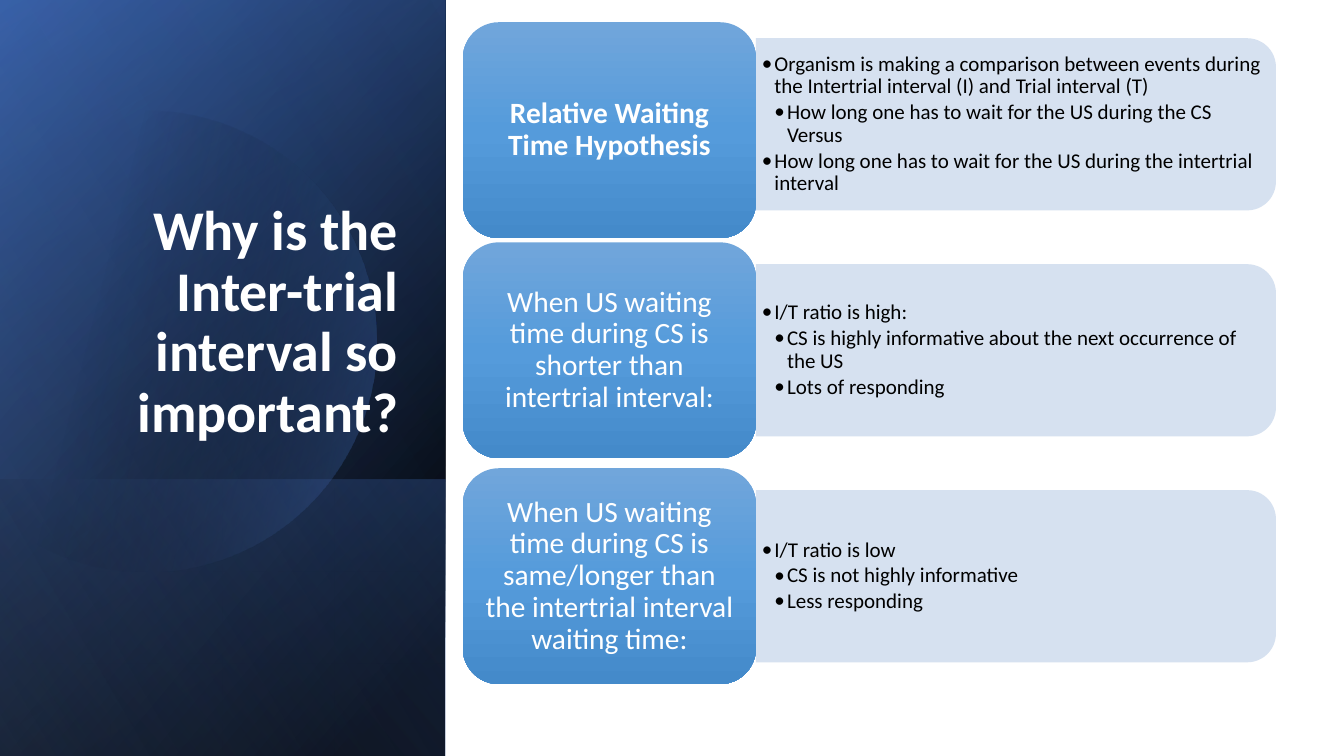
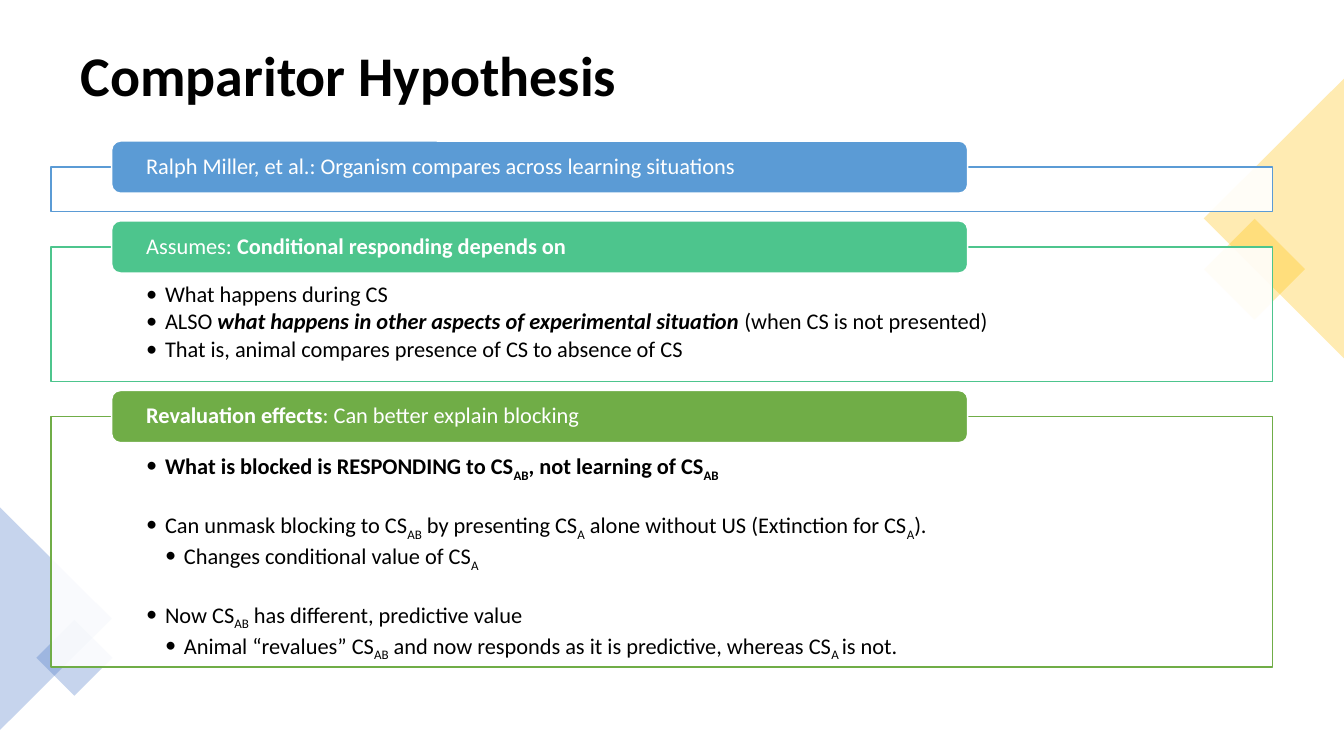
from math import cos, radians, sin

from pptx import Presentation
from pptx.dml.color import RGBColor
from pptx.enum.shapes import MSO_SHAPE as Preset
from pptx.enum.text import MSO_ANCHOR as Anchor, PP_ALIGN as Align
from pptx.oxml.ns import qn
from pptx.util import Inches, Pt
from lxml.etree import SubElement

# Shared look: a square grid of 160 columns by 90 rows
COLS, ROWS = 160, 90
CELL = Inches(1) // 12
FONT = "Calibri"
BLACK = RGBColor(0x00, 0x00, 0x00)
WHITE = RGBColor(0xFF, 0xFF, 0xFF)
NAVY = RGBColor(0x2F, 0x55, 0x97)
BLUE = RGBColor(0x44, 0x72, 0xC4)
PERIWINKLE = RGBColor(0x8F, 0xAA, 0xDC)
PALE_BLUE = RGBColor(0xD2, 0xDE, 0xEF)
GOLD = RGBColor(0xFF, 0xC0, 0x00)
SKY = RGBColor(0x5B, 0x9B, 0xD5)
MINT = RGBColor(0x4D, 0xC5, 0x8D)
GREEN = RGBColor(0x70, 0xAD, 0x47)
LABEL_STOPS = [(0, RGBColor(0x71, 0xA6, 0xDB), 100),
               (50, RGBColor(0x55, 0x9B, 0xDB), 100),
               (100, RGBColor(0x44, 0x8A, 0xCA), 100)]


def draw(slide, outline, box, stops, angle=0, line=None, rotation=0):
    """Draw a preset, or a list of points; stops are (position, colour, opacity)."""
    if isinstance(outline, list):
        builder = slide.shapes.build_freeform(*outline[0], scale=1.0)
        builder.add_line_segments(outline[1:], close=True)
        shape = builder.convert_to_shape()
    else:
        shape = slide.shapes.add_shape(outline, *[int(CELL * v) for v in box])
    shape.shadow.inherit = False
    shape.rotation = rotation
    if line is None:
        shape.line.fill.background()
    else:
        shape.line.color.rgb = line
        shape.line.width = Pt(1)
    properties = shape.element.spPr
    if len(stops) == 1:
        _, colour, opacity = stops[0]
        shape.fill.solid()
        shape.fill.fore_color.rgb = colour
        tint = properties.find(qn("a:solidFill")).find(qn("a:srgbClr"))
        SubElement(tint, qn("a:alpha"), val=str(opacity * 1000))
    else:
        shape.fill.gradient()
        gradient = properties.find(qn("a:gradFill"))
        gradient.find(qn("a:lin")).set("ang", str(angle * 60000))
        stop_list = gradient.find(qn("a:gsLst"))
        for old_stop in list(stop_list):
            stop_list.remove(old_stop)
        for position, colour, opacity in stops:
            stop = SubElement(stop_list, qn("a:gs"), pos=str(position * 1000))
            tint = SubElement(stop, qn("a:srgbClr"), val=str(colour))
            SubElement(tint, qn("a:alpha"), val=str(opacity * 1000))
    return shape


def write(frame, lines, size, colour, align=Align.LEFT, anchor=Anchor.MIDDLE,
          insets=(1.2, 0.6, 1.2, 0.6), hang=0):
    """Write (level, text, space before) lines: *bold*, ~bold italic~, _subscript_."""
    frame.word_wrap = True
    frame.vertical_anchor = anchor
    (frame.margin_left, frame.margin_top,
     frame.margin_right, frame.margin_bottom) = [int(CELL * v) for v in insets]
    for number, (level, text, before) in enumerate(lines):
        paragraph = frame.add_paragraph() if number else frame.paragraphs[0]
        paragraph.alignment = align
        paragraph.line_spacing = 0.9
        paragraph.space_before = Pt(before)
        if level:
            paragraph.level = level
            paragraph.space_after = Pt(size * 0.15)
            bullet_style = paragraph._p.get_or_add_pPr()
            bullet_style.set("marL", str(int(CELL * hang * level)))
            bullet_style.set("indent", str(int(-CELL * hang)))
            SubElement(bullet_style, qn("a:buFont"), typeface=FONT)
            SubElement(bullet_style, qn("a:buChar"), char="•")
        for i, strong in enumerate(text.split("*")):
            for j, slanted in enumerate(strong.split("~")):
                for k, piece in enumerate(slanted.split("_")):
                    if not piece:
                        continue
                    run = paragraph.add_run()
                    run.text = piece
                    run.font.name = FONT
                    run.font.size = Pt(size)
                    run.font.color.rgb = colour
                    run.font.bold = bool(i % 2 or j % 2)
                    run.font.italic = bool(j % 2)
                    if k % 2:
                        run._r.get_or_add_rPr().set("baseline", "-25000")


deck = Presentation()
deck.slide_width, deck.slide_height = COLS * CELL, ROWS * CELL

# Titles of both slides
TITLES = [
    ("Why is the Inter-trial interval so important?", (7.7, 22.1, 40.9, 31.4),
     WHITE, Align.RIGHT, Anchor.BOTTOM),
    ("Comparitor Hypothesis", (8.4, 1.9, 143.2, 14.9),
     BLACK, Align.LEFT, Anchor.MIDDLE),
]
for wording, box, colour, align, anchor in TITLES:
    title = deck.slides.add_slide(deck.slide_layouts[5]).shapes.title
    title.left, title.top, title.width, title.height = [int(CELL * v) for v in box]
    write(title.text_frame, [(0, f"*{wording}*", 0)], 40, colour, align, anchor)
waiting, comparator = deck.slides

# Slide 1: dark panel in layers, with a large disc cut off at the slide's edge
PANEL = 53
DISC_X, DISC_Y, DISC_RADIUS = 17.4, 40.6, 27.4
disc = [(int(CELL * (DISC_X + DISC_RADIUS * cos(radians(a)))),
         int(CELL * (DISC_Y + DISC_RADIUS * sin(radians(a)))))
        for a in range(-129, 130, 3)]
PANEL_LAYERS = [
    (ROWS, [(8, BLACK, 100), (100, NAVY, 100)], 50),
    (ROWS, [(0, BLACK, 0), (99, BLUE, 46)], 30),
    (32.9, [(2, BLUE, 29), (100, BLACK, 30)], 130),
    (None, [(29, BLACK, 0), (100, BLUE, 43)], 14),
    (ROWS, [(0, BLACK, 0), (99, PERIWINKLE, 11)], 120),
]
for depth, stops, angle in PANEL_LAYERS:
    if depth is None:
        draw(waiting, disc, None, stops, angle)
        continue
    box = ((PANEL - depth) / 2, ROWS - (depth + PANEL) / 2, depth, PANEL)
    layer = draw(waiting, Preset.RECTANGLE, box, stops, angle, rotation=90)
    layer.element.spPr.find(qn("a:xfrm")).set("flipH", "1")
waiting.shapes.element.append(waiting.shapes.title.element)

# Slide 1: three rows, a label and its details
ROW_PITCH, FIRST_MIDDLE = 26.9, 14.8
LABEL_W, LABEL_H = 34.9, 25.7
DETAIL_LEFT, DETAIL_W, DETAIL_H = 90, 61.9, 20.5
HYPOTHESIS = [
    ("*Relative Waiting Time Hypothesis*", 0.7, [
        (1, "Organism is making a comparison between events during the "
            "Intertrial interval (I) and Trial interval (T)", 0),
        (2, "How long one has to wait for the US during the CS Versus", 0),
        (1, "How long one has to wait for the US during the intertrial interval", 0)]),
    ("When US waiting time during CS is shorter than intertrial interval:", 0, [
        (1, "I/T ratio is high:", 0),
        (2, "CS is highly informative about the next occurrence of the US", 0),
        (2, "Lots of responding", 0)]),
    ("When US waiting time during CS is same/longer than the intertrial interval "
     "waiting time:", 0, [
        (1, "I/T ratio is low", 0),
        (2, "CS is not highly informative", 0),
        (2, "Less responding", 0)]),
]
for row, (label, shift, details) in enumerate(HYPOTHESIS):
    middle = FIRST_MIDDLE + row * ROW_PITCH
    # The band is turned so that its rounded corners face right
    draw(waiting, Preset.ROUND_2_SAME_RECTANGLE,
         (DETAIL_LEFT + (DETAIL_W - DETAIL_H) / 2, middle - DETAIL_W / 2,
          DETAIL_H, DETAIL_W), [(0, PALE_BLUE, 90)], rotation=90)
    detail_box = (DETAIL_LEFT, middle - 9.25, 61, 18.5)
    detail = waiting.shapes.add_textbox(*[int(CELL * v) for v in detail_box])
    write(detail.text_frame, details, 15, BLACK,
          insets=(0.7, 0.4, 0.7, 0.4), hang=1.5)
    label_block = draw(waiting, Preset.ROUNDED_RECTANGLE,
                       (55.1, middle + shift - LABEL_H / 2, LABEL_W, LABEL_H),
                       LABEL_STOPS, 90)
    write(label_block.text_frame, [(0, label, 0)], 21, WHITE, Align.CENTER,
          insets=(1.1, 0.5, 1.1, 0.5))

# Slide 2: see-through corner ornaments
ORNAMENTS = [
    (Preset.RECTANGLE, (145.1, 27.8, 8.5, 8.5), 45, GOLD),
    (Preset.ISOSCELES_TRIANGLE, (135, 17.65, 33.3, 16.7), 270, GOLD),
    (Preset.ISOSCELES_TRIANGLE, (-6.6, 67, 26.5, 13.3), 90, BLUE),
    (Preset.RECTANGLE, (5.65, 75.1, 6.4, 6.4), 45, BLUE),
]
for outline, box, rotation, colour in ORNAMENTS:
    draw(comparator, outline, box, [(0, colour, 30)], rotation=rotation)

# Slide 2: stacked sections, each a frame with a heading on its top edge
SECTION_GAP, HEADING_H, PARAGRAPH_GAP = 4.2, 6.2, 20
SECTIONS = [
    ("Ralph Miller, et al.: Organism compares across learning situations",
     SKY, 5.3, []),
    ("Assumes: *Conditional responding depends on*", MINT, 16, [
        (1, "What happens during CS", 0),
        (1, "ALSO ~what happens in other aspects of experimental situation ~"
            "(when CS is not presented)", 0),
        (1, "That is, animal compares presence of CS to absence of CS", 0)]),
    ("*Revaluation effects*: Can better explain blocking", GREEN, 29.8, [
        (1, "*What is blocked is RESPONDING to CS_AB_, not learning of CS_AB_*", 0),
        (1, "Can unmask blocking to CS_AB_ by presenting CS_A_ alone without US "
            "(Extinction for CS_A_).", PARAGRAPH_GAP),
        (2, "Changes conditional value of CS_A_", 0),
        (1, "Now CS_AB_ has different, predictive value", PARAGRAPH_GAP),
        (2, "Animal “revalues” CS_AB_ and now responds as it is predictive, "
            "whereas CS_A _is not.", 0)]),
]
section_top = 19.9
for heading, colour, height, points in SECTIONS:
    section = draw(comparator, Preset.RECTANGLE, (6.1, section_top, 145.4, height),
                   [(0, WHITE, 90)], line=colour)
    write(section.text_frame, points, 16, BLACK, anchor=Anchor.TOP,
          insets=(11.3, 4.3, 11.3, 1.4), hang=2.25)
    heading_bar = draw(comparator, Preset.ROUNDED_RECTANGLE,
                       (13.3, section_top - HEADING_H / 2, 101.9, HEADING_H),
                       [(0, colour, 100)], line=WHITE)
    write(heading_bar.text_frame, [(0, heading, 0)], 16, WHITE,
          insets=(3.8, 0, 3.8, 0))
    section_top += height + SECTION_GAP

deck.save("out.pptx")
